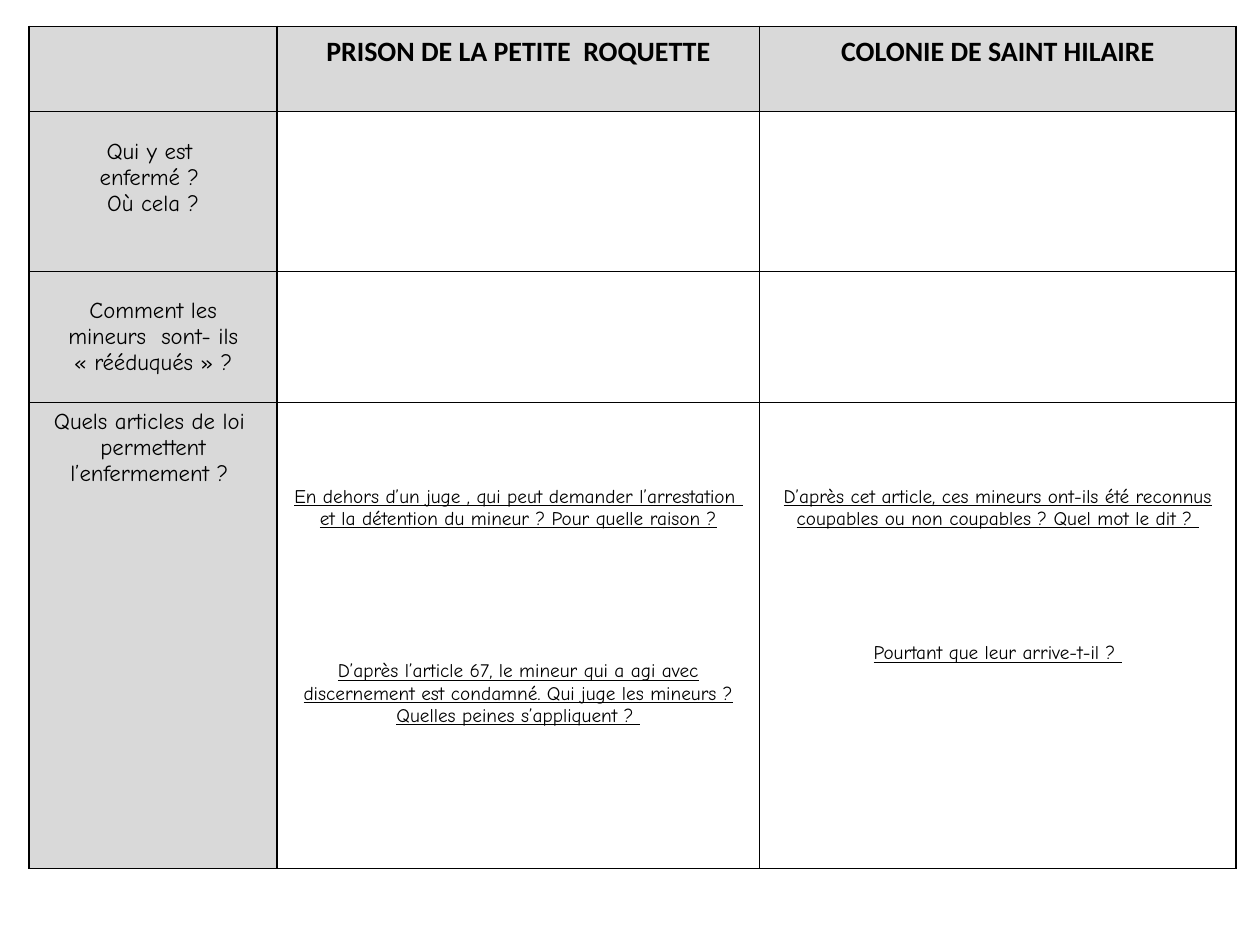
from lxml import etree
from pptx import Presentation
from pptx.dml.color import RGBColor
from pptx.enum import text
from pptx.oxml.ns import qn
from pptx.util import Inches, Pt

# Content: rows of cells, each cell a list of paragraphs
HEADER = [[], ["PRISON DE LA PETITE  ROQUETTE"], ["COLONIE DE SAINT HILAIRE"]]
QUESTIONS = [
    [["Qui y est ", "enfermé ? ", "Où cela ?"], [], []],
    [["Comment les", "mineurs  sont- ils «\u00a0rééduqués\u00a0» ?"], [], []],
    [
        ["Quels articles de loi  permettent l’enfermement ? "],
        ["En dehors d’un juge , qui peut demander l’arrestation  et la détention du mineur ? "
         "Pour quelle raison ?",
         "D’après l’article 67, le mineur qui a agi avec discernement est condamné. "
         "Qui juge les mineurs ? Quelles peines s’appliquent ? "],
        ["D’après cet article, ces mineurs ont-ils été reconnus coupables ou non coupables ? "
         "Quel mot le dit ? ",
         "Pourtant que leur arrive-t-il ? "],
    ],
]
ROWS = [HEADER] + QUESTIONS

# Layout, in inches; answer gaps in points
LEFT, TOP = 0.23, 0.21
COLUMN_WIDTHS = [1.97, 3.83, 3.78]
ROW_HEIGHTS = [0.63, 1.27, 1.04, 3.7]
BOTTOM_MARGINS = [0.32, 0.26, 0.05, 0.05]
ANSWER_TOP = 0.66
ANSWER_GAPS = {1: 74.5, 2: 64}

THEME = {
    "ink": "000000",
    "shade": "D9D9D9",
    "border": 1,
    "header": {"name": "Calibri", "size": 16, "bold": True, "underline": False},
    "label": {"name": "Comic Neue", "size": 13, "bold": False, "underline": False},
    "answer": {"name": "Comic Neue", "size": 11, "bold": False, "underline": True},
}


def draw_borders(cell):
    properties = cell._tc.get_or_add_tcPr()
    for index, side in enumerate(("lnL", "lnR", "lnT", "lnB")):
        line = etree.Element(qn("a:" + side), w=str(Pt(THEME["border"])))
        fill = etree.SubElement(line, qn("a:solidFill"))
        etree.SubElement(fill, qn("a:srgbClr"), val=THEME["ink"])
        properties.insert(index, line)


def write_cell(cell, paragraphs, style, gap):
    for index, wording in enumerate(paragraphs):
        frame = cell.text_frame
        para = frame.add_paragraph() if index else frame.paragraphs[0]
        para.alignment = text.PP_ALIGN.CENTER
        if index:
            para.space_before = Pt(gap)
        span = para.add_run()
        span.text = wording
        span.font.name = style["name"]
        span.font.size = Pt(style["size"])
        span.font.bold = style["bold"]
        span.font.underline = style["underline"]
        span.font.color.rgb = RGBColor.from_string(THEME["ink"])


def style_cell(cell, row, column):
    shaded = row == 0 or column == 0
    last_row = row == len(ROWS) - 1
    if shaded:
        cell.fill.solid()
        cell.fill.fore_color.rgb = RGBColor.from_string(THEME["shade"])
    else:
        cell.fill.background()
    cell.vertical_anchor = text.MSO_ANCHOR.TOP if last_row else text.MSO_ANCHOR.MIDDLE
    cell.margin_top = Inches(ANSWER_TOP if last_row and not shaded else 0.05)
    cell.margin_bottom = Inches(BOTTOM_MARGINS[row])
    draw_borders(cell)


def main():
    deck = Presentation()
    deck.slide_width, deck.slide_height = Inches(10), Inches(7.5)
    page = deck.slides.add_slide(deck.slide_layouts[6])

    # Comparison table
    frame = page.shapes.add_table(
        len(ROWS), len(COLUMN_WIDTHS), Inches(LEFT), Inches(TOP),
        Inches(sum(COLUMN_WIDTHS)), Inches(sum(ROW_HEIGHTS)))
    table = frame.table
    table.first_row = table.horz_banding = False
    for column, width in zip(table.columns, COLUMN_WIDTHS):
        column.width = Inches(width)
    for row, height in zip(table.rows, ROW_HEIGHTS):
        row.height = Inches(height)

    # Cells
    for row, cells in enumerate(ROWS):
        for column, paragraphs in enumerate(cells):
            role = "header" if row == 0 else "answer" if column else "label"
            gap = ANSWER_GAPS[column] if role == "answer" else 0
            cell = table.cell(row, column)
            style_cell(cell, row, column)
            write_cell(cell, paragraphs, THEME[role], gap)

    deck.save("out.pptx")


if __name__ == "__main__":
    main()
